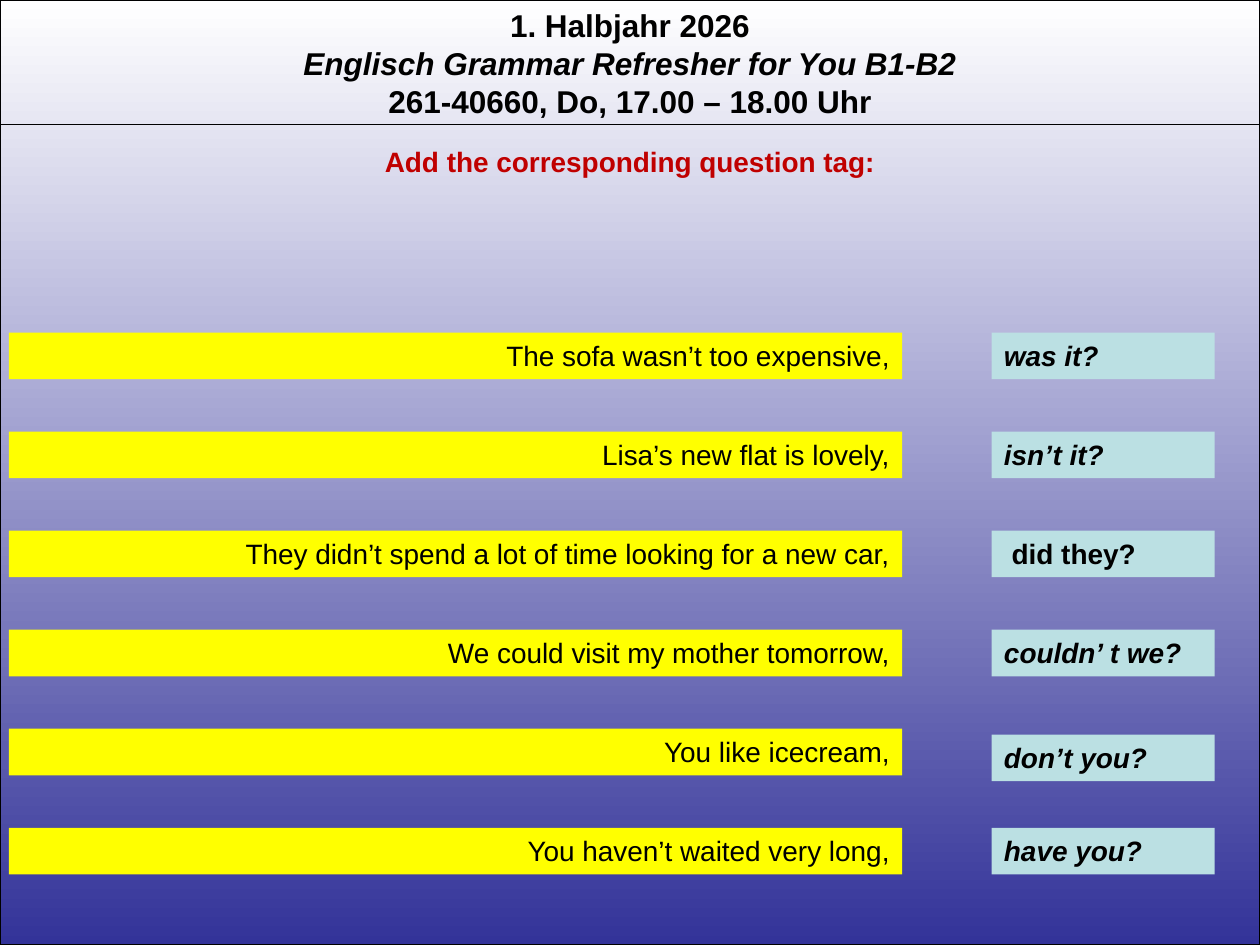
"""Build a question tag exercise slide for an English grammar course."""
from lxml import etree
from pptx import Presentation
from pptx.dml.color import RGBColor
from pptx.enum.shapes import MSO_CONNECTOR, MSO_SHAPE
from pptx.enum.text import MSO_ANCHOR, PP_ALIGN
from pptx.oxml.ns import qn
from pptx.util import Inches, Pt

BLACK = RGBColor(0x00, 0x00, 0x00)
WHITE = RGBColor(0xFF, 0xFF, 0xFF)
INDIGO = RGBColor(0x33, 0x33, 0x99)
RED = RGBColor(0xC0, 0x00, 0x00)
YELLOW = RGBColor(0xFF, 0xFF, 0x00)
PALE_TEAL = RGBColor(0xBB, 0xE0, 0xE3)

FIRST_ROW_TOP = 2.64
ROW_STEP = 0.786
BAR_HEIGHT = 0.37


def add_run(paragraph, text, size, color=BLACK, bold=False, italic=False):
    """Add one formatted Arial run."""
    run = paragraph.add_run()
    run.text = text
    font = run.font
    font.name = "Arial"
    font.size = Pt(size)
    font.bold = bold
    font.italic = italic
    font.color.rgb = color


def add_bar(slide, left, top, width, color, alignment):
    """Add a filled bar and return its paragraph."""
    bar = slide.shapes.add_shape(
        MSO_SHAPE.RECTANGLE, Inches(left), Inches(top), Inches(width), Inches(BAR_HEIGHT)
    )
    bar.shadow.inherit = False
    bar.fill.solid()
    bar.fill.fore_color.rgb = color
    bar.line.fill.background()
    bar.text_frame.word_wrap = True
    bar.text_frame.vertical_anchor = MSO_ANCHOR.TOP
    paragraph = bar.text_frame.paragraphs[0]
    paragraph.alignment = alignment
    return paragraph


presentation = Presentation()
presentation.slide_width = Inches(10)
presentation.slide_height = Inches(7.5)
slide = presentation.slides.add_slide(presentation.slide_layouts[5])

backdrop = slide.shapes.add_shape(MSO_SHAPE.RECTANGLE, 0, 0, Inches(10), Inches(7.5))
backdrop.shadow.inherit = False
backdrop.fill.gradient()
backdrop.fill.gradient_angle = 270
for stop, color in zip(backdrop.fill.gradient_stops, (WHITE, INDIGO)):
    stop.color.rgb = color
backdrop.line.color.rgb = BLACK
backdrop.line.width = Pt(0.75)

header = slide.shapes.add_textbox(0, 0, Inches(10), Inches(1.01))
header.text_frame.word_wrap = True
header_lines = [
    ("1. Halbjahr 2026", False),
    ("Englisch Grammar Refresher for You B1-B2", True),
    ("261-40660, Do, 17.00 – 18.00 Uhr", False),
]
for index, (text, italic) in enumerate(header_lines):
    frame = header.text_frame
    paragraph = frame.add_paragraph() if index else frame.paragraphs[0]
    paragraph.alignment = PP_ALIGN.CENTER
    add_run(paragraph, text, 18, bold=True, italic=italic)

divider = slide.shapes.add_connector(
    MSO_CONNECTOR.STRAIGHT, 0, Inches(0.99), Inches(10), Inches(0.99)
)
divider.line.color.rgb = BLACK
divider.line.width = Pt(0.75)
etree.SubElement(divider.element.spPr, qn("a:effectLst"))

title = slide.shapes.title
title.left, title.top = Inches(0), Inches(1.1)
title.width, title.height = Inches(10), Inches(BAR_HEIGHT)
title.text_frame.word_wrap = True
title.text_frame.vertical_anchor = MSO_ANCHOR.TOP
title_paragraph = title.text_frame.paragraphs[0]
title_paragraph.alignment = PP_ALIGN.CENTER
add_run(title_paragraph, "Add the corresponding question tag:", 16, RED, bold=True)
divider.element.addnext(title.element)

exercises = [
    ("The sofa wasn’t too expensive,", "was it?"),
    ("Lisa’s new flat is lovely,", "isn’t it?"),
    ("They didn’t spend a lot of time looking for a new car,", "did they?"),
    ("We could visit my mother tomorrow,", "couldn’ t we?"),
    ("You like icecream,", "don’t you?"),
    ("You haven’t waited very long,", "have you?"),
]
for row, (sentence, tag) in enumerate(exercises):
    top = FIRST_ROW_TOP + row * ROW_STEP
    sentence_paragraph = add_bar(slide, 0.07, top, 7.09, YELLOW, PP_ALIGN.RIGHT)
    add_run(sentence_paragraph, sentence, 16)

    tag_top = 5.83 if tag == "don’t you?" else top
    tag_paragraph = add_bar(slide, 7.87, tag_top, 1.77, PALE_TEAL, PP_ALIGN.LEFT)
    upright = tag == "did they?"
    if upright:
        add_run(tag_paragraph, " ", 16)
    add_run(tag_paragraph, tag, 16, bold=True, italic=not upright)

presentation.save("out.pptx")
